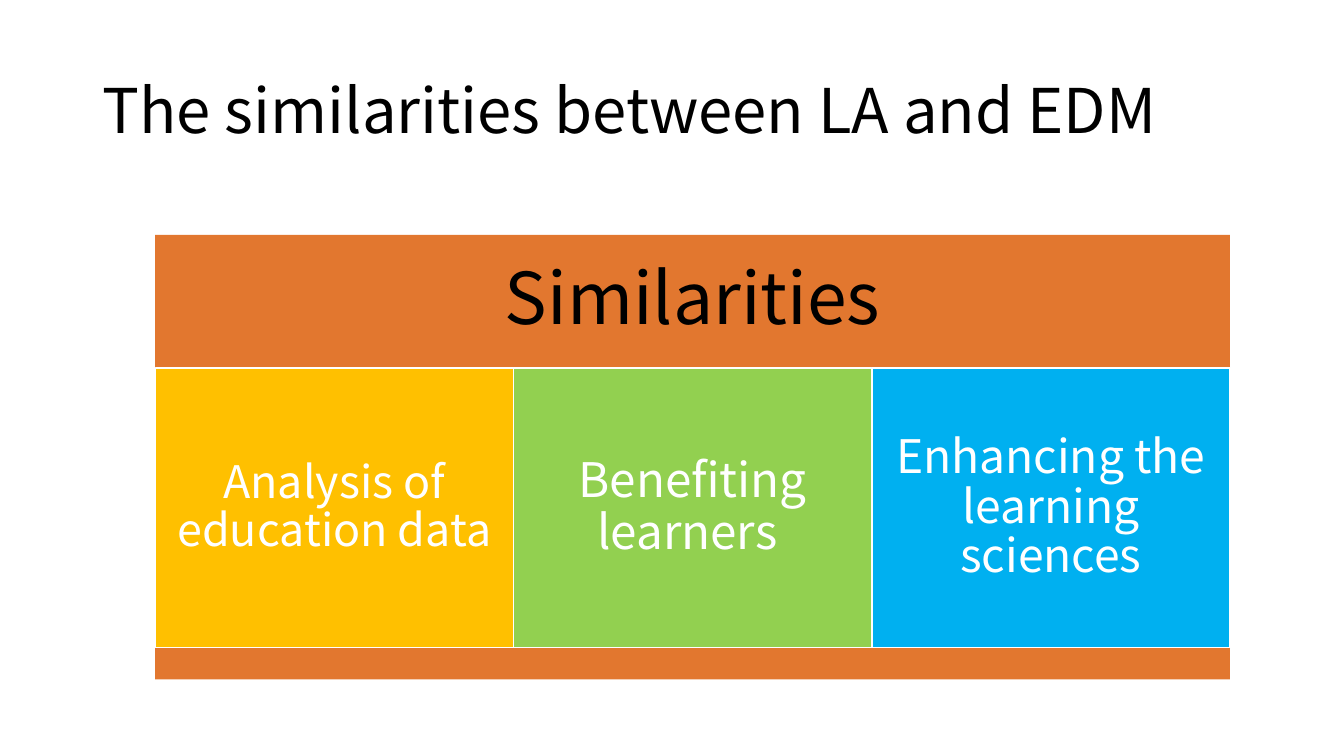
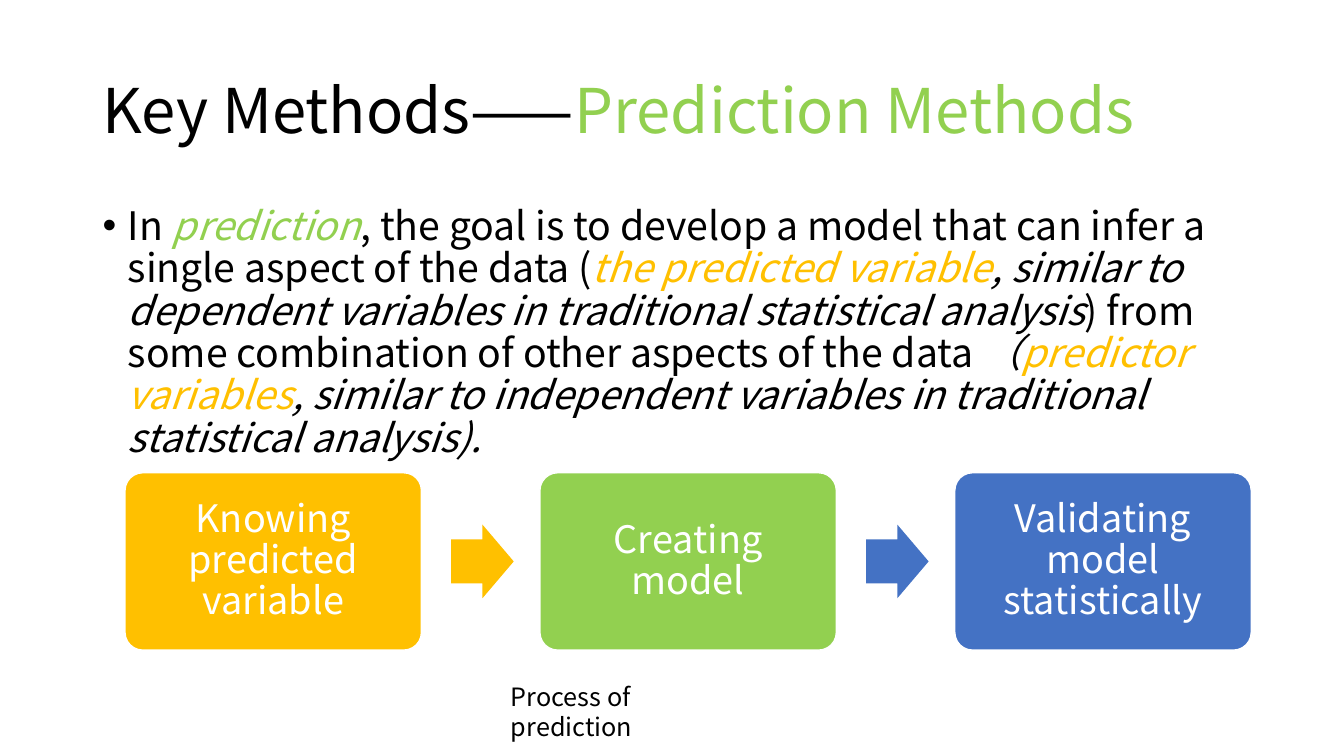
from dataclasses import dataclass

import lxml.etree
import pptx
import pptx.dml.color
import pptx.enum.shapes
import pptx.enum.text
import pptx.oxml.ns
import pptx.util

Inches = pptx.util.Inches
Shape = pptx.enum.shapes.MSO_SHAPE
Align = pptx.enum.text.PP_ALIGN
Anchor = pptx.enum.text.MSO_ANCHOR


@dataclass(frozen=True)
class Theme:
    font: str = "Noto Sans CJK SC"
    black: str = "000000"
    white: str = "FFFFFF"
    orange: str = "E2772F"
    gold: str = "FFC000"
    green: str = "92D050"
    sky: str = "00B0F0"
    blue: str = "4472C4"
    title_size: int = 44
    banner_size: int = 51
    body_size: int = 28
    step_size: int = 27
    caption_size: int = 18
    line_spacing: float = 0.9


THEME = Theme()


def rgb(value):
    return pptx.dml.color.RGBColor.from_string(value)


def add_span(para, text, size, color=THEME.black, italic=False):
    span = para.add_run()
    span.text = text
    span.font.name = THEME.font
    span.font.size = pptx.util.Pt(size)
    span.font.color.rgb = rgb(color)
    span.font.italic = italic
    east_asian = lxml.etree.SubElement(span.font._element, pptx.oxml.ns.qn("a:ea"))
    east_asian.set("typeface", THEME.font)


def write_text(box, spans, size, color=THEME.black, align=Align.LEFT,
               anchor=Anchor.TOP, inset=None, spacing=THEME.line_spacing):
    frame = box.text_frame
    frame.word_wrap = True
    frame.vertical_anchor = anchor
    if inset is not None:
        frame.margin_left = frame.margin_right = Inches(inset)
        frame.margin_top = frame.margin_bottom = Inches(inset)
    para = frame.paragraphs[0]
    para.alignment = align
    para.line_spacing = spacing
    if isinstance(spans, str):
        spans = [(spans, color)]
    for text, *style in spans:
        add_span(para, text, size, *style)
    return para


def add_text(page, spans, left, top, width, height, **text_format):
    box = page.shapes.add_textbox(
        Inches(left), Inches(top), Inches(width), Inches(height))
    return write_text(box, spans, **text_format)


def add_title(page, spans):
    add_text(page, spans, 0.92, 0.4, 11.5, 1.45,
             size=THEME.title_size, anchor=Anchor.MIDDLE)


def add_block(page, kind, left, top, width, height, fill, outlined=False, adjustments=()):
    block = page.shapes.add_shape(
        kind, Inches(left), Inches(top), Inches(width), Inches(height))
    block.shadow.inherit = False
    block.fill.solid()
    block.fill.fore_color.rgb = rgb(fill)
    if outlined:
        block.line.color.rgb = rgb(THEME.white)
        block.line.width = pptx.util.Pt(1)
    else:
        block.line.fill.background()
    for index, value in enumerate(adjustments):
        block.adjustments[index] = value
    return block


def add_label(block, text, size, inset, color=THEME.white):
    write_text(block, text, size, color, Align.CENTER, Anchor.MIDDLE, inset)


def set_bullet(para, indent):
    properties = para._p.get_or_add_pPr()
    properties.set("marL", str(Inches(indent)))
    properties.set("indent", str(-Inches(indent)))
    font = lxml.etree.SubElement(properties, pptx.oxml.ns.qn("a:buFont"))
    font.set("typeface", "Arial")
    bullet = lxml.etree.SubElement(properties, pptx.oxml.ns.qn("a:buChar"))
    bullet.set("char", "•")


def add_pillars(page, heading, pillars):
    left, top, width = 1.54, 2.33, 10.66
    banner_height, pillar_height, base_height = 1.32, 2.78, 0.31
    pillar_top = top + banner_height
    pillar_width = width / len(pillars)
    banner = add_block(page, Shape.RECTANGLE, left, top, width, banner_height, THEME.orange)
    add_label(banner, heading, THEME.banner_size, 0.21, THEME.black)
    for index, (text, fill, size) in enumerate(pillars):
        pillar = add_block(page, Shape.RECTANGLE, left + index * pillar_width, pillar_top,
                           pillar_width, pillar_height, fill, outlined=True)
        add_label(pillar, text, size, 0.14)
    add_block(page, Shape.RECTANGLE, left, pillar_top + pillar_height,
              width, base_height, THEME.orange)


def add_process(page, steps):
    left, top, width, height, pitch = 1.24, 4.69, 2.94, 1.76, 4.115
    arrow_width, arrow_height, arrow_gap = 0.62, 0.73, 0.26
    for index, (text, fill, arrow_fill) in enumerate(steps):
        step_left = left + index * pitch
        if arrow_fill:
            add_block(page, Shape.RIGHT_ARROW, step_left - arrow_gap - arrow_width,
                      top + (height - arrow_height) / 2, arrow_width, arrow_height,
                      arrow_fill, adjustments=(0.6, 0.5))
        step = add_block(page, Shape.ROUNDED_RECTANGLE, step_left, top, width, height,
                         fill, outlined=True, adjustments=(0.1,))
        add_label(step, text, THEME.step_size, 0.11)


def build_similarities(page):
    add_title(page, "The similarities between LA and EDM")
    add_pillars(page, "Similarities", [
        ("Analysis of education data", THEME.gold, 32),
        ("Benefiting learners ", THEME.green, 34),
        ("Enhancing the learning sciences", THEME.sky, 33),
    ])


def build_prediction(page):
    add_title(page, [("Key Methods——",), ("Prediction Methods", THEME.green)])
    para = add_text(page, [
        ("In ",),
        ("prediction", THEME.green, True),
        (", the goal is to develop a model that can infer a single aspect of the data (",),
        ("the predicted variable", THEME.gold, True),
        (", similar to dependent variables in traditional statistical analysis",
         THEME.black, True),
        (") from some combination of other aspects of the data ",),
        ("（", THEME.black, True),
        ("predictor variables", THEME.gold, True),
        (", similar to independent variables in traditional statistical analysis).",
         THEME.black, True),
    ], 0.92, 2, 11.5, 2.29, size=THEME.body_size)
    para.space_before = pptx.util.Pt(10)
    set_bullet(para, 0.25)
    add_process(page, [
        ("Knowing predicted variable", THEME.gold, None),
        ("Creating model", THEME.green, THEME.gold),
        ("Validating model statistically", THEME.blue, THEME.blue),
    ])
    add_text(page, "Process of prediction", 4.97, 6.71, 1.6, 0.7,
             size=THEME.caption_size, spacing=1.0)


def main():
    deck = pptx.Presentation()
    deck.slide_width = Inches(13.33)
    deck.slide_height = Inches(7.5)
    for build in (build_similarities, build_prediction):
        build(deck.slides.add_slide(deck.slide_layouts[6]))
    deck.save("out.pptx")


if __name__ == "__main__":
    main()
